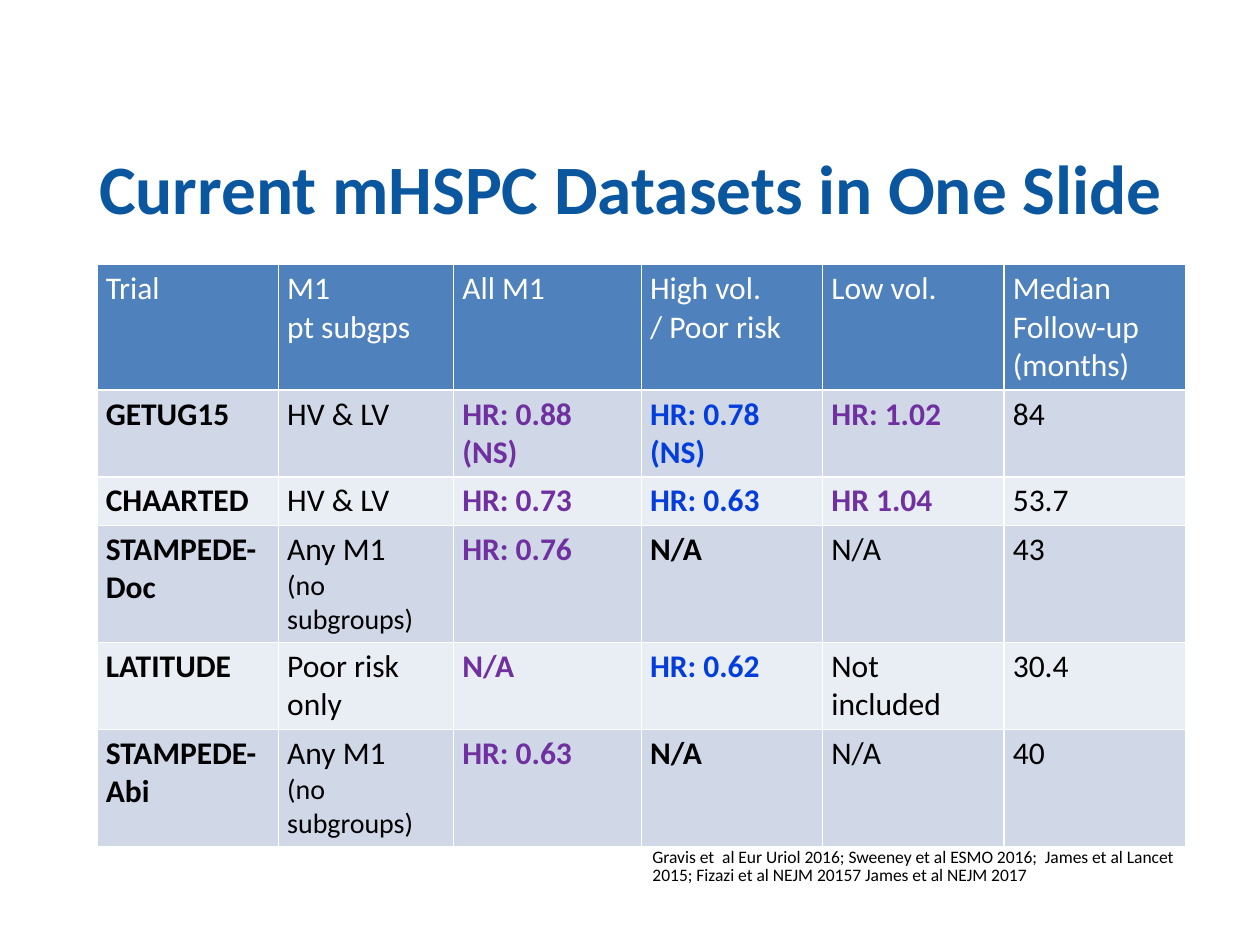
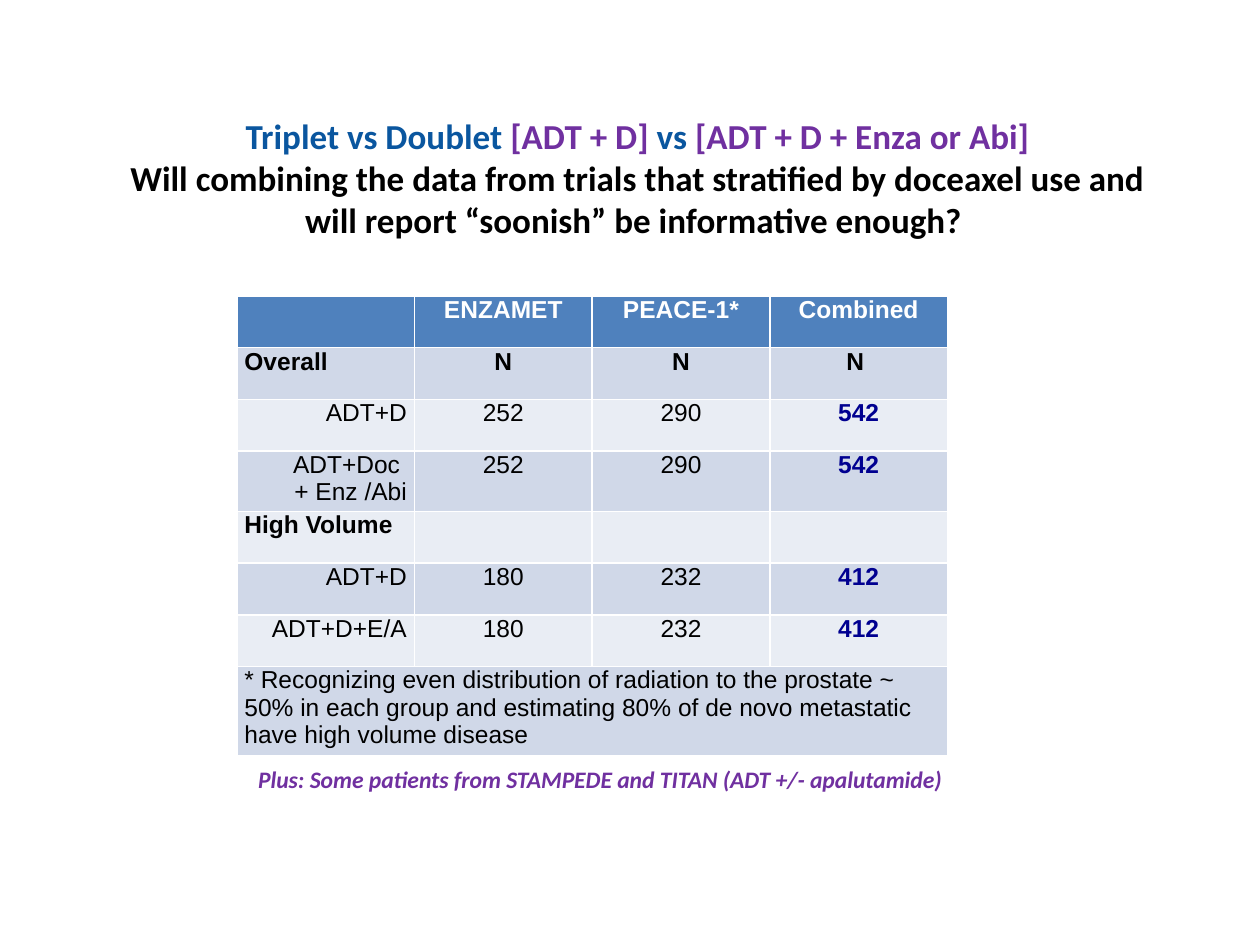
from pptx import Presentation
from pptx import util as u
from pptx.dml.color import RGBColor
from pptx.enum import text

BLACK, WHITE, BLUE = "000000", "FFFFFF", "0A569F"
PURPLE, BRIGHT_BLUE, NAVY = "7030A0", "033DDC", "000090"
HEADER_FILL, BAND_FILLS = "4F81BD", ("D0D8E8", "E9EDF4")
LEFT, CENTER, RIGHT = text.PP_ALIGN.LEFT, text.PP_ALIGN.CENTER, text.PP_ALIGN.RIGHT


def add_run(paragraph, words, size, color=BLACK, bold=False, font="Calibri"):
    run = paragraph.add_run()
    run.text = words
    run.font.name = font
    run.font.size = u.Pt(size)
    run.font.bold = bold
    run.font.color.rgb = RGBColor.from_string(color)
    return run


def add_grid(slide, place, widths, heights, margins):
    """Add a banded table and return it."""
    frame = slide.shapes.add_table(len(heights), len(widths), *map(u.Inches, place))
    table = frame.table
    for column, width in zip(table.columns, widths):
        column.width = u.Inches(width)
    for index, (row, height) in enumerate(zip(table.rows, heights)):
        row.height = u.Inches(height)
        fill = BAND_FILLS[(index - 1) % 2] if index else HEADER_FILL
        for cell in row.cells:
            cell.fill.solid()
            cell.fill.fore_color.rgb = RGBColor.from_string(fill)
            cell.margin_left = cell.margin_right = u.Inches(margins[0])
            cell.margin_top = cell.margin_bottom = u.Inches(margins[1])
    frame.height = u.Inches(place[3])
    return table


presentation = Presentation()
presentation.slide_width, presentation.slide_height = u.Inches(10), u.Inches(7.5)

# Both slides with their titles
slides, titles = [], []
for place in ((0.52, 0.94, 8.97, 1.09), (0.73, 0.77, 8.66, 0.94)):
    slide = presentation.slides.add_slide(presentation.slide_layouts[5])
    title = slide.shapes.title
    title.left, title.top, title.width, title.height = map(u.Inches, place)
    title.text_frame.auto_size = text.MSO_AUTO_SIZE.NONE
    title.text_frame.vertical_anchor = text.MSO_ANCHOR.MIDDLE
    title.text_frame.paragraphs[0].alignment = CENTER
    slides.append(slide)
    titles.append(title.text_frame)

# Slide 1: trial datasets
add_run(titles[0].paragraphs[0], "Current mHSPC Datasets in One Slide", 39.6, BLUE, True)

trials = [
    ["Trial", "M1\npt subgps", "All M1", "High vol.\n/ Poor risk", "Low vol.",
     "Median\nFollow-up\n(months)"],
    ["GETUG15", "HV & LV", "HR: 0.88 (NS)", "HR: 0.78 (NS)", "HR: 1.02", "84"],
    ["CHAARTED", "HV & LV", "HR: 0.73", "HR: 0.63", "HR 1.04", "53.7"],
    ["STAMPEDE-Doc", "Any M1\n(no subgroups)", "HR: 0.76", "N/A", "N/A", "43"],
    ["LATITUDE", "Poor risk only", "N/A", "HR: 0.62", "Not included", "30.4"],
    ["STAMPEDE-Abi", "Any M1\n(no subgroups)", "HR: 0.63", "N/A", "N/A", "40"],
]
hazard_colors = {2: PURPLE, 3: BRIGHT_BLUE, 4: PURPLE}
table = add_grid(slides[0], (0.77, 2.1, 8.62, 4.52), (1.44, 1.39, 1.49, 1.44, 1.44, 1.44),
                 (0.9, 0.35, 0.35, 0.62, 0.35, 0.62), (0.07, 0.04))
for row, values in enumerate(trials):
    for column, value in enumerate(values):
        is_hazard = value.startswith("HR")
        color = hazard_colors[column] if is_hazard or column == 2 else BLACK
        bold = row > 0 and (is_hazard or column in (0, 2, 3))
        frame = table.cell(row, column).text_frame
        for number, line in enumerate(value.split("\n")):
            paragraph = frame.add_paragraph() if number else frame.paragraphs[0]
            size = 16 if line == "(no subgroups)" else 18
            add_run(paragraph, line, size, color if row else WHITE, bold)

# Slide 1: references
box = slides[0].shapes.add_textbox(*map(u.Inches, (5.08, 6.68, 4.48, 0.32)))
box.text_frame.word_wrap = True
paragraph = box.text_frame.paragraphs[0]
paragraph.line_spacing = 0.9
add_run(paragraph, "Gravis et  al Eur Uriol 2016; Sweeney et al ESMO 2016;  James et al Lancet "
        "2015; Fizazi et al NEJM 20157 James et al NEJM 2017", 10)

# Slide 2: title in two colours above the question
titles[1].margin_top = u.Inches(0.38)
paragraph = titles[1].paragraphs[0]
for words, color in (("Triplet vs Doublet ", BLUE), ("[ADT + D] ", PURPLE), ("vs ", BLUE),
                     ("[ADT + D + Enza or Abi]", PURPLE)):
    add_run(paragraph, words, 20, color, True)
paragraph.add_line_break()
add_run(paragraph, "Will combining the data from trials that stratified by doceaxel use and "
        "will report “soonish” be informative enough? ", 20, BLACK, True)

# Slide 2: patient numbers
footnote = ("* Recognizing even distribution of radiation to the prostate ~ 50% in each group "
            "and estimating 80% of de novo metastatic have high volume disease")
patients = [
    ["", "ENZAMET", "PEACE-1*", "Combined"],
    ["Overall", "N", "N", "N "],
    ["ADT+D", "252", "290", "542"],
    ["ADT+Doc \n+ Enz /Abi", "252", "290", "542"],
    ["High Volume", "", "", ""],
    ["ADT+D", "180", "232", "412"],
    ["ADT+D+E/A", "180", "232", "412"],
    [footnote],
]
table = add_grid(slides[1], (1.88, 2.35, 5.66, 3.62), [1.41] * 4,
                 (0.41, 0.41, 0.41, 0.48, 0.41, 0.41, 0.41, 0.71), (0.06, 0))
table.cell(7, 0).merge(table.cell(7, 3))
for row, values in enumerate(patients):
    is_heading = row in (0, 1, 4)
    for column, value in enumerate(values):
        if not value:
            continue
        is_total = column == 3 and not is_heading
        color = WHITE if row == 0 else NAVY if is_total else BLACK
        label_alignment = RIGHT if value.startswith("ADT") else LEFT
        frame = table.cell(row, column).text_frame
        for number, line in enumerate(value.split("\n")):
            paragraph = frame.add_paragraph() if number else frame.paragraphs[0]
            paragraph.alignment = CENTER if column else label_alignment
            add_run(paragraph, line, 14, color, is_heading or is_total, "Arial")

# Slide 2: remark below the table
box = slides[1].shapes.add_textbox(*map(u.Inches, (1.95, 6.02, 5.7, 0.33)))
box.text_frame.word_wrap = False
box.text_frame.auto_size = text.MSO_AUTO_SIZE.SHAPE_TO_FIT_TEXT
remark = add_run(box.text_frame.paragraphs[0],
                 "Plus: Some patients from STAMPEDE and TITAN (ADT +/- apalutamide)",
                 13.5, PURPLE, True)
remark.font.italic = True

presentation.save("out.pptx")
